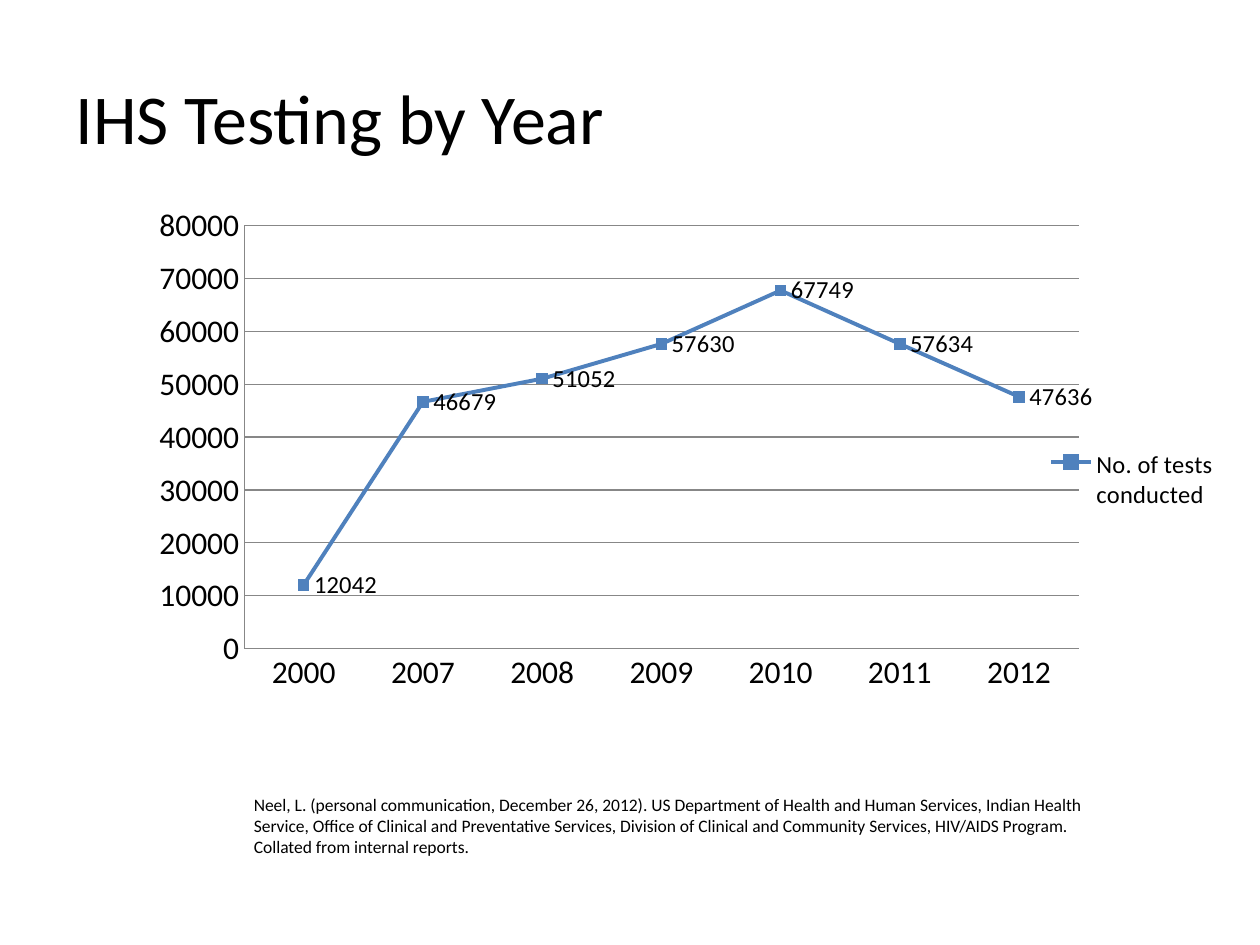
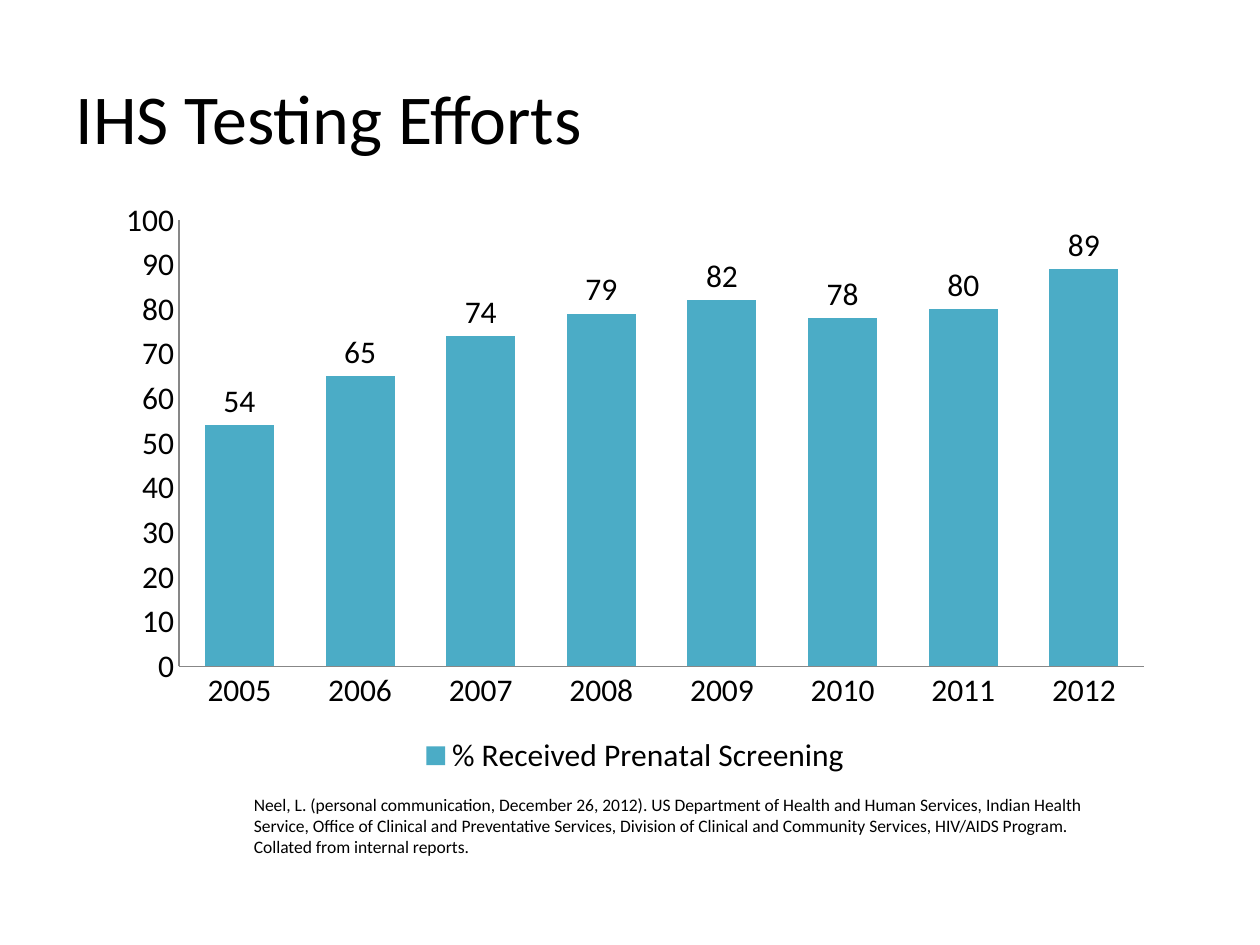
from dataclasses import dataclass
from typing import Optional

import pptx
import pptx.chart.data
import pptx.dml.color
import pptx.enum.chart
import pptx.enum.text
import pptx.oxml
import pptx.oxml.ns
import pptx.util

Pt = pptx.util.Pt
XL = pptx.enum.chart

# Shared style
FONT = "Calibri"
BLACK = "000000"
GREY = "878787"
CITATION = (
    "Neel, L. (personal communication, December 26, 2012). "
    "US Department of Health and Human Services, Indian Health Service, "
    "Office of Clinical and Preventative Services, Division of Clinical and "
    "Community Services, HIV/AIDS Program. Collated from internal reports."
)


@dataclass(frozen=True)
class Box:
    left: float
    top: float
    width: float
    height: float

    def emu(self) -> tuple:
        return Pt(self.left), Pt(self.top), Pt(self.width), Pt(self.height)


@dataclass(frozen=True)
class ChartSlide:
    title: str
    box: Box
    kind: XL.XL_CHART_TYPE
    series: str
    values: dict[str, int]
    color: str
    axis_max: int
    axis_step: int
    legend_pos: XL.XL_LEGEND_POSITION
    label_pos: XL.XL_LABEL_POSITION
    small_size: float = 18
    gridlines: bool = False
    plot_area: Optional[Box] = None    # percent of the chart
    legend_area: Optional[Box] = None  # percent of the chart


TITLE_BOX = Box(36, 21.6, 648, 90)
CITATION_BOX = Box(138, 450, 510, 44)

SLIDES = [
    ChartSlide(
        "IHS Testing by Year", Box(54, 114, 648, 294),
        XL.XL_CHART_TYPE.LINE_MARKERS, "No. of tests conducted",
        {"2000": 12042, "2007": 46679, "2008": 51052, "2009": 57630,
         "2010": 67749, "2011": 57634, "2012": 47636},
        "4F81BD", 80000, 10000,
        XL.XL_LEGEND_POSITION.RIGHT, XL.XL_LABEL_POSITION.RIGHT,
        small_size=14, gridlines=True,
        plot_area=Box(13.2, 5.1, 73.6, 82.2),
        legend_area=Box(83.5, 47, 16, 15),
    ),
    ChartSlide(
        "IHS Testing Efforts", Box(60, 108, 606, 338.4),
        XL.XL_CHART_TYPE.COLUMN_CLUSTERED, "% Received Prenatal Screening",
        {"2005": 54, "2006": 65, "2007": 74, "2008": 79,
         "2009": 82, "2010": 78, "2011": 80, "2012": 89},
        "4BACC6", 100, 10,
        XL.XL_LEGEND_POSITION.BOTTOM, XL.XL_LABEL_POSITION.OUTSIDE_END,
    ),
]


def rgb(color: str) -> pptx.dml.color.RGBColor:
    return pptx.dml.color.RGBColor.from_string(color)


def style_font(font, size: float) -> None:
    font.name = FONT
    font.size = Pt(size)
    font.color.rgb = rgb(BLACK)


def style_line(fmt, color: str, width: float) -> None:
    fmt.line.color.rgb = rgb(color)
    fmt.line.width = Pt(width)


def write(tf, text: str, size: float) -> None:
    tf.word_wrap = True
    p = tf.paragraphs[0]
    p.alignment = pptx.enum.text.PP_ALIGN.LEFT
    r = p.add_run()
    r.text = text
    style_font(r.font, size)


def set_layout(parent, index: int, area: Box, inner: bool = False) -> None:
    """Place a chart part at a fixed share of the chart."""
    for old in parent.findall(pptx.oxml.ns.qn("c:layout")):
        parent.remove(old)
    target = '<c:layoutTarget val="inner"/>' if inner else ""
    modes = '<c:xMode val="edge"/><c:yMode val="edge"/>'
    sizes = "".join(
        f'<c:{tag} val="{value / 100:.3f}"/>'
        for tag, value in zip("xywh", (area.left, area.top, area.width, area.height))
    )
    parent.insert(index, pptx.oxml.parse_xml(
        f'<c:layout {pptx.oxml.ns.nsdecls("c")}><c:manualLayout>'
        f"{target}{modes}{sizes}</c:manualLayout></c:layout>"
    ))


def style_axes(chart, spec: ChartSlide) -> None:
    for axis in (chart.category_axis, chart.value_axis):
        axis.major_tick_mark = axis.minor_tick_mark = XL.XL_TICK_MARK.NONE
        axis.has_major_gridlines = False
        style_line(axis.format, GREY, 0.75)
    axis = chart.value_axis
    axis.minimum_scale, axis.maximum_scale = 0, spec.axis_max
    axis.major_unit = spec.axis_step
    axis.has_major_gridlines = spec.gridlines
    if spec.gridlines:
        style_line(axis.major_gridlines.format, GREY, 0.75)


def style_series(plot, spec: ChartSlide) -> None:
    series = plot.series[0]
    if spec.kind == XL.XL_CHART_TYPE.LINE_MARKERS:
        series.smooth = False
        style_line(series.format, spec.color, 2.25)
        marker = series.marker
        marker.style = XL.XL_MARKER_STYLE.SQUARE
        marker.size = 6
        marker.format.fill.solid()
        marker.format.fill.fore_color.rgb = rgb(spec.color)
        style_line(marker.format, spec.color, 0.75)
    else:
        plot.gap_width = 75
        series.format.fill.solid()
        series.format.fill.fore_color.rgb = rgb(spec.color)


def add_chart(s, spec: ChartSlide) -> None:
    data = pptx.chart.data.CategoryChartData()
    data.categories = list(spec.values)
    data.add_series(spec.series, list(spec.values.values()))
    chart = s.shapes.add_chart(spec.kind, *spec.box.emu(), data).chart
    chart.has_title = False
    style_font(chart.font, 18)
    style_axes(chart, spec)

    # Series and value labels
    plot = chart.plots[0]
    plot.vary_by_categories = False
    style_series(plot, spec)
    plot.has_data_labels = True
    labels = plot.data_labels
    labels.show_value = True
    labels.position = spec.label_pos
    style_font(labels.font, spec.small_size)

    # Legend
    chart.has_legend = True
    legend = chart.legend
    legend.position = spec.legend_pos
    legend.include_in_layout = False
    style_font(legend.font, spec.small_size)

    # Fixed placement
    if spec.plot_area:
        plot_area = chart.element.find(".//" + pptx.oxml.ns.qn("c:plotArea"))
        set_layout(plot_area, 0, spec.plot_area, inner=True)
    if spec.legend_area:
        legend_part = chart.element.find(".//" + pptx.oxml.ns.qn("c:legend"))
        set_layout(legend_part, 1, spec.legend_area)


def add_slide(prs, spec: ChartSlide) -> None:
    s = prs.slides.add_slide(prs.slide_layouts[5])

    # Title
    title = s.shapes.title
    title.left, title.top, title.width, title.height = TITLE_BOX.emu()
    title.text_frame.vertical_anchor = pptx.enum.text.MSO_ANCHOR.MIDDLE
    write(title.text_frame, spec.title, 40)

    add_chart(s, spec)

    # Citation
    sp = s.shapes.add_textbox(*CITATION_BOX.emu())
    write(sp.text_frame, CITATION, 10)


def main() -> None:
    prs = pptx.Presentation()
    prs.slide_width, prs.slide_height = Pt(720), Pt(540)
    for spec in SLIDES:
        add_slide(prs, spec)
    prs.save("out.pptx")


if __name__ == "__main__":
    main()
